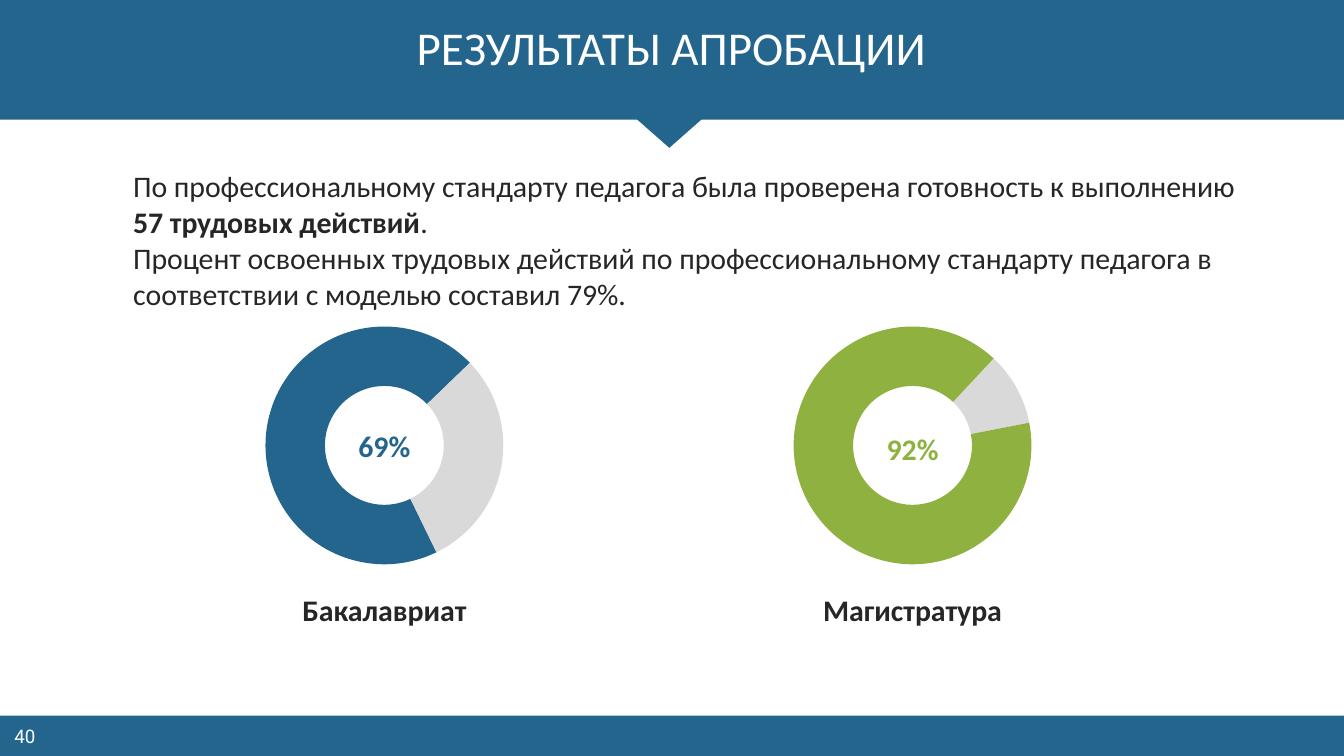
from lxml import etree
from pptx import Presentation
from pptx.chart.data import CategoryChartData
from pptx.dml.color import RGBColor
from pptx.enum.chart import XL_CHART_TYPE
from pptx.enum.shapes import MSO_SHAPE
from pptx.enum.text import MSO_ANCHOR, MSO_AUTO_SIZE, PP_ALIGN
from pptx.oxml.ns import qn
from pptx.util import Inches, Pt

RECTANGLE, TRIANGLE = MSO_SHAPE.RECTANGLE, MSO_SHAPE.ISOSCELES_TRIANGLE
TOP, MIDDLE = MSO_ANCHOR.TOP, MSO_ANCHOR.MIDDLE
LEFT, CENTER = PP_ALIGN.LEFT, PP_ALIGN.CENTER
DOUGHNUT, NO_FIT = XL_CHART_TYPE.DOUGHNUT, MSO_AUTO_SIZE.NONE
COLORS = {"blue": "24658D", "green": "8FB140", "gray": "D9D9D9",
          "text": "262626", "white": "FFFFFF"}
COLORS = {name: RGBColor.from_string(value) for name, value in COLORS.items()}
WIDTH = 10
HEIGHT = WIDTH * 9 / 16


def place(shape, left, top, width, height):
    box = {"left": left, "top": top, "width": width, "height": height}
    for name, value in box.items():
        setattr(shape, name, Inches(value))


def write(shape, paragraphs, size, color, align=CENTER, anchor=TOP, font="Calibri", wrap=True):
    """Fill a shape with paragraphs, each a list of (text, bold) spans."""
    frame = shape.text_frame
    layout = {"margin_left": 0, "margin_right": 0, "margin_top": 0, "margin_bottom": 0,
              "word_wrap": wrap, "auto_size": NO_FIT, "vertical_anchor": anchor}
    for name, value in layout.items():
        setattr(frame, name, value)
    for index, spans in enumerate(paragraphs):
        para = frame.add_paragraph() if index else frame.paragraphs[0]
        para.alignment, para.space_before = align, Pt(0)
        for text, bold in spans:
            span = para.add_run()
            span.text = text
            for name, value in {"size": Pt(size), "bold": bold, "name": font}.items():
                setattr(span.font, name, value)
            span.font.color.rgb = COLORS[color]


deck = Presentation()
deck.slide_width, deck.slide_height = Inches(WIDTH), Inches(HEIGHT)
page = deck.slides.add_slide(deck.slide_layouts[1])
title, body = page.placeholders[0], page.placeholders[1]

# Header with its pointer, and footer, all behind the title
for kind, rotation, area in [
    (RECTANGLE, 0, (0, HEIGHT - 0.3, WIDTH, 0.3)),
    (RECTANGLE, 0, (0, 0, WIDTH, 0.89)),
    (TRIANGLE, 180, (4.73, 0.88, 0.5, 0.22)),
]:
    band = page.shapes.add_shape(kind, *map(Inches, area))
    band.rotation = rotation
    band.shadow.inherit = False
    band.fill.solid()
    band.fill.fore_color.rgb = COLORS["blue"]
    band.line.fill.background()
    title.element.addprevious(band.element)

# Title and page number
place(title, 0.43, 0.14, 9.13, 0.37)
write(title, [[("РЕЗУЛЬТАТЫ АПРОБАЦИИ", False)]], 25.2, "white")
number = page.shapes.add_textbox(*map(Inches, (0.02, 5.39, 0.33, 0.17)))
write(number, [[("40", False)]], 10, "white", anchor=MIDDLE, font="Roboto")

# Body text without bullets, narrow enough to keep the bold words together
place(body, 0.99, 1.25, 8.4, 1.08)
write(body, [
    [("По профессиональному стандарту педагога была проверена готовность к выполнению ", False),
     ("57 трудовых действий", True), (".", False)],
    [("Процент освоенных трудовых действий по профессиональному стандарту педагога "
      "в соответствии с моделью составил 79%.", False)],
], 16, "text", align=LEFT)
for para in body.text_frame.paragraphs:
    properties = para._p.get_or_add_pPr()
    properties.set("marL", "0")
    properties.set("indent", "0")
    etree.SubElement(properties, qn("a:buNone"))

# Doughnut charts with a percentage in the hole and a caption below
CHART_TOP, CHART_WIDTH, CHART_HEIGHT, RING = 2.23, 2.05, 2.17, 1.77
for center, values, colors, start, percent, percent_top, color, caption in [
    (2.86, (70, 30), ("blue", "gray"), 154, "69%", 3.13, "blue", "Бакалавриат"),
    (6.79, (10, 90), ("gray", "green"), 43, "92%", 3.15, "green", "Магистратура"),
]:
    data = CategoryChartData()
    data.categories = ["1", "2"]
    data.add_series("Series 1", values)
    area = (center - CHART_WIDTH / 2, CHART_TOP, CHART_WIDTH, CHART_HEIGHT)
    chart = page.shapes.add_chart(DOUGHNUT, *map(Inches, area), data).chart
    chart.has_legend = chart.has_title = False
    chart.font.size, chart.font.name = Pt(18), "Calibri"
    chart.font.color.rgb = COLORS["text"]
    plot = chart.plots[0]
    plot.vary_by_categories = True
    for index, name in enumerate(colors):
        slice_format = plot.series[0].points[index].format
        slice_format.fill.solid()
        slice_format.fill.fore_color.rgb = COLORS[name]
        slice_format.line.fill.background()

    # Start angle, hole size and ring position
    space = chart._chartSpace
    for tag, value in {"c:firstSliceAng": start, "c:holeSize": 70}.items():
        for old in space.findall(".//" + qn(tag)):
            old.getparent().remove(old)
        etree.SubElement(space.find(".//" + qn("c:doughnutChart")), qn(tag)).set("val", str(value))
    plot_area = space.find(".//" + qn("c:plotArea"))
    for old in plot_area.findall(qn("c:layout")):
        plot_area.remove(old)
    layout = etree.Element(qn("c:layout"))
    plot_area.insert(0, layout)
    manual = etree.SubElement(layout, qn("c:manualLayout"))
    share_x, share_y = RING / CHART_WIDTH, RING / CHART_HEIGHT
    for tag, value in {"layoutTarget": "inner", "xMode": "edge", "yMode": "edge",
                       "x": (1 - share_x) / 2, "y": (1 - share_y) / 2,
                       "w": share_x, "h": share_y}.items():
        etree.SubElement(manual, qn("c:" + tag)).set("val", str(value))

    for text, top, width, height, tint, anchor in [
        (percent, percent_top, 0.7, 0.37, color, MIDDLE),
        (caption, CHART_TOP + CHART_HEIGHT, 1.35, 0.27, "text", TOP),
    ]:
        label = page.shapes.add_textbox(*map(Inches, (center - width / 2, top, width, height)))
        write(label, [[(text, True)]], 16, tint, anchor=anchor, wrap=False)

deck.save("out.pptx")
